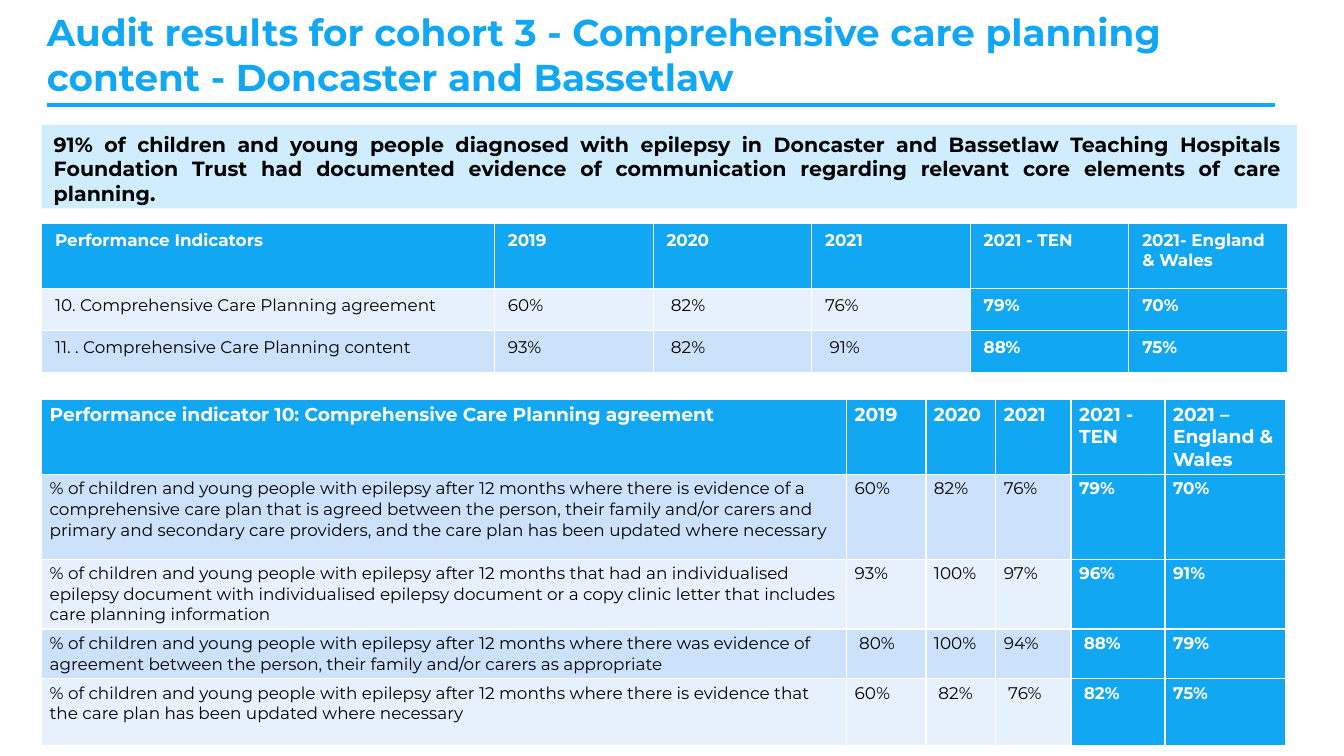
from dataclasses import dataclass

from lxml import etree
from pptx import Presentation
from pptx.dml.color import RGBColor
from pptx.enum.shapes import MSO_CONNECTOR, MSO_SHAPE
from pptx.enum.text import MSO_ANCHOR, PP_ALIGN
from pptx.oxml.ns import qn
from pptx.util import Inches, Pt

FONT = "Montserrat"
BLUE = RGBColor(0x11, 0xA7, 0xF2)
BANNER = RGBColor(0xCF, 0xED, 0xFC)
MID = RGBColor(0xCC, 0xE1, 0xFA)
PALE = RGBColor(0xE7, 0xF1, 0xFC)
WHITE = RGBColor(0xFF, 0xFF, 0xFF)
BLACK = RGBColor(0, 0, 0)
TRUST_COLS = 4  # label and three yearly columns; comparators follow


@dataclass
class ResultTable:
    left: float
    top: float
    cols: list[float]
    heights: list[float]
    header_size: int
    inset: tuple[float, float]
    border: float
    bands: tuple[RGBColor, RGBColor]
    rows: list[list[str]]


INDICATORS = ResultTable(
    0.31, 1.66, [3.37] + [1.18] * 5, [0.49, 0.31, 0.31], 9, (0.1, 0.05), 0.5, (PALE, MID),
    [
        ["Performance Indicators", "2019", "2020", "2021", "2021 - TEN", "2021- England & Wales"],
        ["10. Comprehensive Care Planning agreement", "60%", " 82%", "76%", "79%", "70%"],
        ["11. . Comprehensive Care Planning content", "93%", " 82%", " 91%", "88%", "75%"],
    ],
)

COHORT = "% of children and young people with epilepsy after 12 months "
AGREEMENT = ResultTable(
    0.31, 2.97, [5.99, 0.59, 0.52, 0.56, 0.7, 0.9], [0.56, 0.63, 0.52, 0.37, 0.5],
    10, (0.06, 0.03), 0.77, (MID, PALE),
    [
        # The last heading has no-break spaces before England and Wales
        ["Performance indicator 10: Comprehensive Care Planning agreement",
         "2019", "2020", "2021", "2021 - TEN", "2021 – England & Wales"],
        [COHORT + "where there is evidence of a comprehensive care plan that is agreed between "
         "the person, their family and/or carers and primary and secondary care providers, "
         "and the care plan has been updated where necessary",
         "60%", "82%", "76%", "79%", "70%"],
        [COHORT + "that had an individualised epilepsy document with individualised epilepsy "
         "document or a copy clinic letter that includes care planning information",
         "93%", "100%", "97%", "96%", "91%"],
        [COHORT + "where there was evidence of agreement between the person, their family "
         "and/or carers as appropriate",
         " 80%", "100%", "94%", " 88%", "79%"],
        [COHORT + "where there is evidence that the care plan has been updated where necessary",
         "60%", " 82%", " 76%", " 82%", "75%"],
    ],
)


def write(tf, text: str, size: int, color: RGBColor, bold: bool = True) -> None:
    tf.word_wrap = True
    p = tf.paragraphs[0]
    p.text = text
    p.font.name, p.font.size, p.font.bold = FONT, Pt(size), bold
    p.font.color.rgb = color


def set_borders(cell, width: float) -> None:
    tc_pr = cell._tc.get_or_add_tcPr()
    for i, side in enumerate(("lnL", "lnR", "lnT", "lnB")):
        ln = etree.Element(qn(f"a:{side}"), w=str(Pt(width)))
        fill = etree.SubElement(ln, qn("a:solidFill"))
        etree.SubElement(fill, qn("a:srgbClr"), val=str(WHITE))
        tc_pr.insert(i, ln)


def add_results(s, results: ResultTable) -> None:
    frame = s.shapes.add_table(
        len(results.rows), len(results.cols), Inches(results.left), Inches(results.top),
        Inches(sum(results.cols)), Inches(sum(results.heights)))
    table = frame.table
    for col, width in zip(table.columns, results.cols):
        col.width = Inches(width)
    x, y = results.inset
    for r, (row, height) in enumerate(zip(results.rows, results.heights)):
        table.rows[r].height = Inches(height)
        for c, text in enumerate(row):
            cell = table.cell(r, c)
            strong = r == 0 or c >= TRUST_COLS
            cell.fill.solid()
            cell.fill.fore_color.rgb = BLUE if strong else results.bands[(r - 1) % 2]
            cell.margin_left = cell.margin_right = Inches(x)
            cell.margin_top = cell.margin_bottom = Inches(y)
            write(cell.text_frame, text, results.header_size if r == 0 else 9,
                  WHITE if strong else BLACK, strong)
            set_borders(cell, results.border)


prs = Presentation()
prs.slide_width = Inches(10)
prs.slide_height = prs.slide_width * 9 // 16
s = prs.slides.add_slide(prs.slide_layouts[6])

# Title and rule
rule = s.shapes.add_connector(
    MSO_CONNECTOR.STRAIGHT, Inches(0.35), Inches(0.78), Inches(9.49), Inches(0.78))
rule.line.color.rgb = BLUE
rule.line.width = Pt(2.25)
etree.SubElement(rule._element.spPr, qn("a:effectLst"))

title = s.shapes.add_textbox(Inches(0.25), Inches(0.14), Inches(9), Inches(0.52))
title.text_frame.vertical_anchor = MSO_ANCHOR.MIDDLE
write(title.text_frame, "Audit results for cohort 3 - Comprehensive care planning content - "
      "Doncaster and Bassetlaw", 20, BLUE)

# Key finding
banner = s.shapes.add_shape(
    MSO_SHAPE.RECTANGLE, Inches(0.31), Inches(0.93), Inches(9.34), Inches(0.62))
banner.shadow.inherit = False
banner.fill.solid()
banner.fill.fore_color.rgb = BANNER
banner.line.fill.background()
tf = banner.text_frame
tf.vertical_anchor = MSO_ANCHOR.TOP
tf.margin_left, tf.margin_right = Inches(0.09), Inches(0.11)
tf.margin_top, tf.margin_bottom = Inches(0.05), 0
write(tf, "91% of children and young people diagnosed with epilepsy in Doncaster and Bassetlaw "
      "Teaching Hospitals Foundation Trust had documented evidence of communication regarding "
      "relevant core elements of care planning.", 11, BLACK)
tf.paragraphs[0].alignment = PP_ALIGN.JUSTIFY

# Result tables
for results in (INDICATORS, AGREEMENT):
    add_results(s, results)

prs.save("out.pptx")
